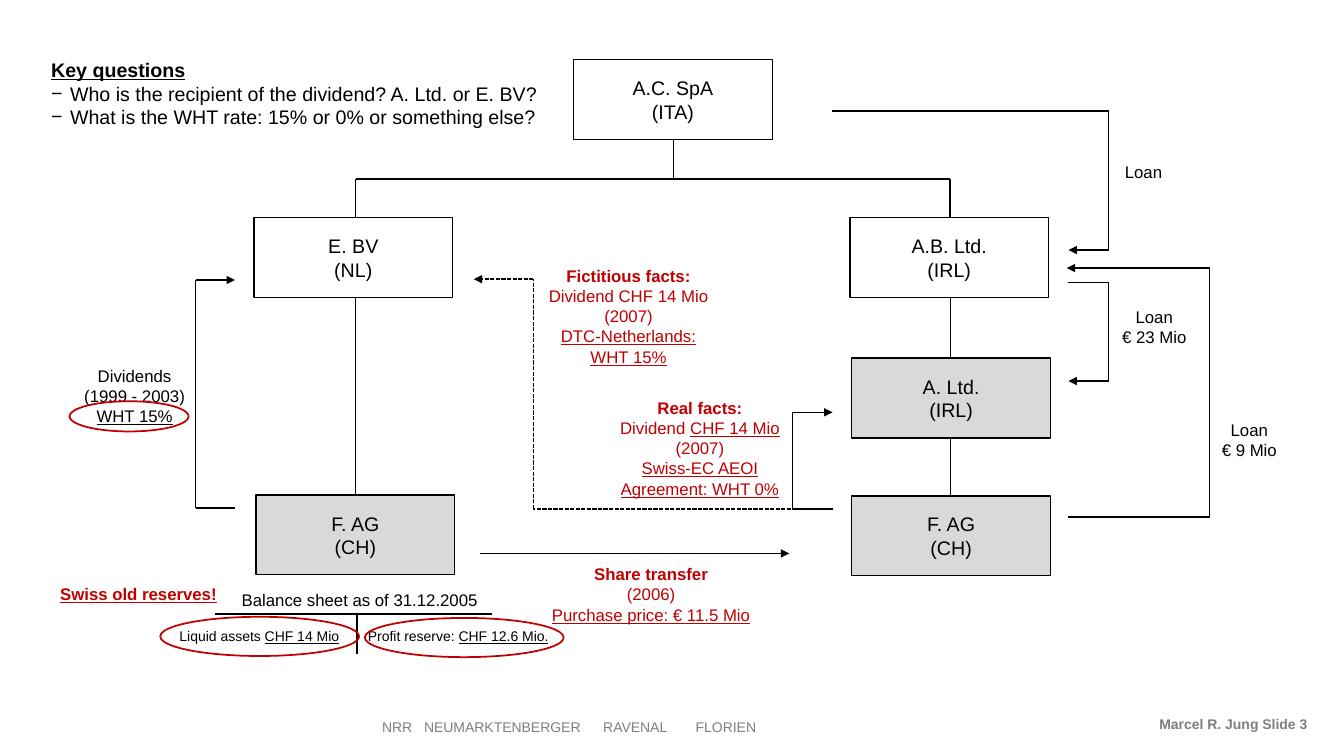
from dataclasses import dataclass
from itertools import pairwise
from typing import NamedTuple, Sequence

from lxml import etree
from pptx import Presentation
from pptx.dml.color import RGBColor
from pptx.enum import dml, shapes, text
from pptx.oxml import ns
from pptx.util import Pt

BLACK = RGBColor(0x00, 0x00, 0x00)
RED = RGBColor(0xC0, 0x00, 0x00)
GREY_TEXT = RGBColor(0x7F, 0x7F, 0x7F)
GREY_FILL = RGBColor(0xD9, 0xD9, 0xD9)
FONT = "Arial"
COMPANY_WIDTH, COMPANY_HEIGHT = 142, 57
LEFT, CENTER, RIGHT = text.PP_ALIGN.LEFT, text.PP_ALIGN.CENTER, text.PP_ALIGN.RIGHT
MIDDLE, BOTTOM = text.MSO_ANCHOR.MIDDLE, text.MSO_ANCHOR.BOTTOM


class Run(NamedTuple):
    text: str
    bold: bool = False
    underline: bool = False


class Area(NamedTuple):
    left: float
    top: float
    width: float
    height: float


Line = str | Run | Sequence[Run]


@dataclass(frozen=True)
class Company:
    name: str
    country: str
    left: float
    top: float
    fill: RGBColor | None = None


@dataclass(frozen=True)
class Route:
    points: Sequence[tuple[float, float]]
    arrow: bool = True
    dashed: bool = False


@dataclass(frozen=True)
class Label:
    area: Area
    lines: Sequence[Line]
    color: RGBColor = BLACK
    size: float = 12
    align: text.PP_ALIGN = CENTER
    anchor: text.MSO_ANCHOR = MIDDLE
    wrap: bool = False
    tabs: Sequence[float] = ()


COMPANIES = [
    Company("A.C. SpA", "ITA", 409.7, 42.5),
    Company("E. BV", "NL", 181.4, 155.5),
    Company("A.B. Ltd.", "IRL", 607, 155.5),
    Company("A. Ltd.", "IRL", 608.4, 255.8),
    Company("F. AG", "CH", 182.9, 353.6),
    Company("F. AG", "CH", 608.4, 354.2, GREY_FILL),
]
COMPANIES[3:5] = [
    Company("A. Ltd.", "IRL", 608.4, 255.8, GREY_FILL),
    Company("F. AG", "CH", 182.9, 353.6, GREY_FILL),
]

ROUTES = [
    # Ownership
    Route([(481, 100), (481, 128)], arrow=False),
    Route([(254, 156), (254, 128), (678.5, 128), (678.5, 156)], arrow=False),
    Route([(254, 213), (254, 354)], arrow=False),
    Route([(679, 213), (679, 256)], arrow=False),
    Route([(679, 313), (679, 354)], arrow=False),
    # Loans
    Route([(594, 79.2), (792, 79.2), (792, 178.6), (763.2, 178.6)]),
    Route([(763.2, 202), (792, 202), (792, 272.2), (763.2, 272.2)]),
    Route([(763.2, 369.4), (864, 369.4), (864, 191.5), (762, 191.5)]),
    # Dividends
    Route([(167.8, 363), (139.7, 363), (139.7, 200), (167.8, 200)]),
    Route([(594.7, 363.6), (566, 363.6), (566, 294.5), (594.7, 294.5)]),
    Route([(565, 363.6), (381, 363.6), (381, 199.4), (338.4, 199.4)], dashed=True),
    # Share transfer
    Route([(342.7, 395.3), (563.8, 395.3)]),
    # Balance sheet
    Route([(153.4, 438.5), (351.4, 438.5)], arrow=False),
    Route([(254.9, 438.5), (254.9, 467.3)], arrow=False),
]

LABELS = [
    Label(Area(803.5, 115.2, 26.6, 14.4), ["Loan"]),
    Label(Area(800, 218.9, 49, 28.8), ["Loan", "€ 23 Mio"]),
    Label(Area(872.6, 299.5, 39.6, 28.8), ["Loan", "€ 9 Mio"]),
    Label(Area(59.8, 260.6, 72.7, 43.9),
          ["Dividends", "(1999 - 2003)", Run("WHT 15%", underline=True)]),
    Label(Area(373, 189.4, 152, 72.7),
          [Run("Fictitious facts:", bold=True), "Dividend CHF 14 Mio", "(2007)",
           Run("DTC-Netherlands:", underline=True), Run("WHT 15%", underline=True)],
          RED, wrap=True),
    Label(Area(432.7, 283.7, 134.6, 72.7),
          [Run("Real facts:", bold=True),
           [Run("Dividend "), Run("CHF 14 Mio", underline=True)], "(2007)",
           Run("Swiss-EC AEOI Agreement: WHT 0%", underline=True)],
          RED, wrap=True),
    Label(Area(393.8, 402.5, 142.6, 43.9),
          [Run("Share transfer", bold=True), "(2006)",
           Run("Purchase price: € 11.5 Mio", underline=True)], RED),
    Label(Area(42.5, 416.9, 113, 14.4),
          [Run("Swiss old reserves!", bold=True, underline=True)], RED),
    Label(Area(172, 421.2, 170, 14.4), ["Balance sheet as of 31.12.2005"]),
    Label(Area(128.2, 447.5, 115.2, 14),
          [[Run("Liquid assets "), Run("CHF 14 Mio", underline=True)]],
          size=10, align=LEFT),
    Label(Area(262.8, 447.5, 130.3, 14),
          [[Run("Profit reserve: "), Run("CHF 12.6 Mio.", underline=True)]],
          size=10, align=LEFT),
    Label(Area(272.9, 499.7, 290, 25.2),
          ["NRR\tNEUMARKTENBERGER\tRAVENAL\tFLORIEN"],
          GREY_TEXT, 10, LEFT, BOTTOM, True, (30, 158, 224)),
    Label(Area(814.3, 498.2, 119.5, 25.2),
          [Run("Marcel R. Jung Slide 3", bold=True)], GREY_TEXT, 10, RIGHT, BOTTOM, True),
]

HIGHLIGHTS = [
    Area(49.7, 286.6, 85, 21.6),
    Area(114.5, 440.6, 142, 28),
    Area(260.6, 441.4, 142, 28),
]


def in_points(values: Sequence[float]) -> list[Pt]:
    return [Pt(value) for value in values]


def write_text(frame, lines: Sequence[Line], *, size: float = 14, color: RGBColor = BLACK,
               align=LEFT, anchor=MIDDLE, wrap: bool = True,
               bullet: str = "", tabs: Sequence[float] = ()) -> None:
    """Fill a text frame, one paragraph for each line."""
    frame.auto_size = text.MSO_AUTO_SIZE.NONE
    frame.word_wrap = wrap
    frame.vertical_anchor = anchor
    frame.margin_left = frame.margin_top = frame.margin_right = frame.margin_bottom = 0
    for index, line in enumerate(lines):
        paragraph = frame.add_paragraph() if index else frame.paragraphs[0]
        properties = paragraph._p.get_or_add_pPr()
        if bullet:
            properties.set("marL", str(Pt(13.5)))
            properties.set("indent", str(-Pt(13.5)))
            etree.SubElement(properties, ns.qn("a:buFont"), typeface=FONT)
            etree.SubElement(properties, ns.qn("a:buChar"), char=bullet)
        if tabs:
            tab_list = etree.SubElement(properties, ns.qn("a:tabLst"))
            for position in tabs:
                etree.SubElement(tab_list, ns.qn("a:tab"), pos=str(Pt(position)), algn="l")
        paragraph.alignment = align
        paragraph.space_before = Pt(0)
        if isinstance(line, str):
            line = Run(line)
        for part in [line] if isinstance(line, Run) else line:
            run = paragraph.add_run()
            run.text = part.text
            run.font.name, run.font.size = FONT, Pt(size)
            run.font.bold, run.font.underline = part.bold, part.underline
            run.font.color.rgb = color


def add_outline(slide, kind, area: Area, color: RGBColor, weight: float,
                fill: RGBColor | None = None):
    shape = slide.shapes.add_shape(kind, *in_points(area))
    shape.shadow.inherit = False
    shape.line.color.rgb, shape.line.width = color, Pt(weight)
    if fill is None:
        shape.fill.background()
    else:
        shape.fill.solid()
        shape.fill.fore_color.rgb = fill
    return shape


def add_route(slide, route: Route) -> None:
    """Draw straight segments through the points, with any arrow at the last one."""
    for start, end in pairwise(route.points):
        connector = slide.shapes.add_connector(
            shapes.MSO_CONNECTOR.STRAIGHT, *in_points((*start, *end)))
        connector.line.color.rgb, connector.line.width = BLACK, Pt(1)
        if route.dashed:
            connector.line.dash_style = dml.MSO_LINE.SQUARE_DOT
        if route.arrow and end == route.points[-1]:
            etree.SubElement(connector.line._get_or_add_ln(), ns.qn("a:tailEnd"), type="triangle")
        etree.SubElement(connector._element.spPr, ns.qn("a:effectLst"))


def place(shape, area: Area) -> None:
    shape.left, shape.top, shape.width, shape.height = in_points(area)


def main() -> None:
    presentation = Presentation()
    presentation.slide_width, presentation.slide_height = Pt(960), Pt(540)
    slide = presentation.slides.add_slide(presentation.slide_layouts[1])

    title, questions = slide.placeholders
    place(title, Area(36.5, 41, 380, 17))
    write_text(title.text_frame, [Run("Key questions", bold=True, underline=True)])
    place(questions, Area(36.5, 58, 380, 34))
    write_text(questions.text_frame,
               ["Who is the recipient of the dividend? A. Ltd. or E. BV?",
                "What is the WHT rate: 15% or 0% or something else?"], bullet="−")

    for company in COMPANIES:
        area = Area(company.left, company.top, COMPANY_WIDTH, COMPANY_HEIGHT)
        box = add_outline(slide, shapes.MSO_SHAPE.RECTANGLE, area, BLACK, 1, company.fill)
        write_text(box.text_frame, [company.name, f"({company.country})"], align=CENTER)
    for route in ROUTES:
        add_route(slide, route)
    for label in LABELS:
        box = slide.shapes.add_textbox(*in_points(label.area))
        write_text(box.text_frame, label.lines, size=label.size, color=label.color,
                   align=label.align, anchor=label.anchor, wrap=label.wrap, tabs=label.tabs)
    for area in HIGHLIGHTS:
        add_outline(slide, shapes.MSO_SHAPE.OVAL, area, RED, 1.25)

    presentation.save("out.pptx")


if __name__ == "__main__":
    main()
